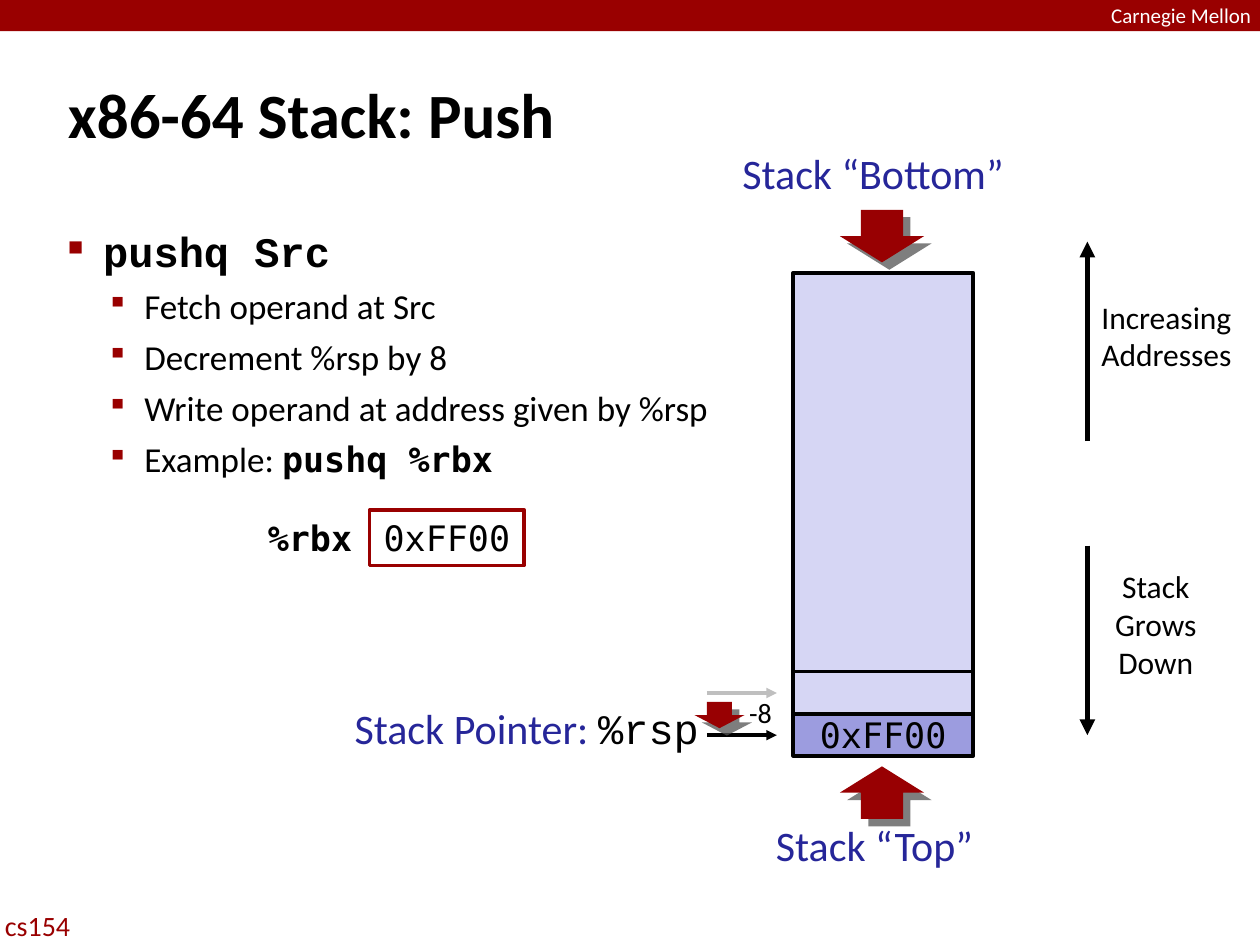
from lxml import etree
from pptx import Presentation
from pptx.dml.color import RGBColor
from pptx.enum.shapes import MSO_CONNECTOR, MSO_SHAPE
from pptx.enum.text import MSO_ANCHOR, PP_ALIGN
from pptx.oxml.ns import qn
from pptx.util import Cm, Pt

LEFT, CENTER, RIGHT = PP_ALIGN.LEFT, PP_ALIGN.CENTER, PP_ALIGN.RIGHT
TOP, MIDDLE = MSO_ANCHOR.TOP, MSO_ANCHOR.MIDDLE
RECTANGLE = MSO_SHAPE.RECTANGLE
DOWN, UP = MSO_SHAPE.DOWN_ARROW, MSO_SHAPE.UP_ARROW
STRAIGHT = MSO_CONNECTOR.STRAIGHT

SANS, COURIER, MONO = "Calibri", "Courier New", "DejaVu Sans Mono"
COLORS = {
    "black": "000000", "white": "FFFFFF", "red": "990000", "blue": "262699",
    "arrow": "980002", "shadow": "535353", "gray": "BFBFBF",
    "stack": "D6D6F4", "pushed": "9C9CDF",
}

# Stack geometry in centimetres
STACK_LEFT, STACK_TOP, STACK_WIDTH, STACK_HEIGHT = 15.99, 5.5, 3.63, 8.89
CELL_HEIGHT = 0.85
STACK_RIGHT = STACK_LEFT + STACK_WIDTH
STACK_BOTTOM = STACK_TOP + STACK_HEIGHT
DIVIDER = STACK_BOTTOM - CELL_HEIGHT


def rgb(name):
    return RGBColor.from_string(COLORS[name])


def add_run(paragraph, text, *, font=SANS, size=20, color="black", bold=False):
    run = paragraph.add_run()
    run.text = text
    run.font.name = font
    run.font.size = Pt(size)
    run.font.bold = bold
    run.font.color.rgb = rgb(color)


presentation = Presentation()
presentation.slide_width, presentation.slide_height = Cm(25.4), Cm(19.05)
slide = presentation.slides.add_slide(presentation.slide_layouts[5])
shapes = slide.shapes

# Title
title = shapes.title
title.left, title.top, title.width, title.height = map(Cm, (1.27, 1.42, 21.59, 2.08))
frame = title.text_frame
frame.margin_left = frame.margin_right = frame.margin_top = frame.margin_bottom = Cm(0.1)
frame.vertical_anchor = TOP
frame.paragraphs[0].alignment = LEFT
add_run(frame.paragraphs[0], "x86-64 Stack: Push", size=36, bold=True)

# Bulleted explanation
code = {"font": MONO, "bold": True}
bullets = [
    (0, [("pushq Src", {"font": COURIER, "size": 24, "bold": True})]),
    (1, [("Fetch operand at Src", {})]),
    (1, [("Decrement %rsp by 8", {})]),
    (1, [("Write operand at address given by %rsp", {})]),
    (1, [("Example: ", {}), ("pushq %rbx", code)]),
]
bullet_styles = [(0.71, 0.71, "■", 50), (1.54, 0.76, "▪", 85)]  # margin, hang, mark, percent
body = shapes.add_textbox(Cm(1.27), Cm(4.45), Cm(22.86), Cm(12.57))
frame = body.text_frame
frame.word_wrap = True
frame.margin_left = frame.margin_right = frame.margin_top = frame.margin_bottom = Cm(0.1)
for index, (level, runs) in enumerate(bullets):
    paragraph = frame.paragraphs[0] if index == 0 else frame.add_paragraph()
    paragraph.level = level
    if index:
        paragraph.space_before = Pt(5)
    margin, hang, mark, percent = bullet_styles[level]
    properties = paragraph._p.get_or_add_pPr()
    properties.set("marL", str(Cm(margin)))
    properties.set("indent", str(-Cm(hang)))
    bullet_color = etree.SubElement(properties, qn("a:buClr"))
    etree.SubElement(bullet_color, qn("a:srgbClr"), val=COLORS["red"])
    etree.SubElement(properties, qn("a:buSzPct"), val=str(percent * 1000))
    etree.SubElement(properties, qn("a:buChar"), char=mark)
    for text, style in runs:
        add_run(paragraph, text, **style)

# Rectangles and labels: box, fill, outline, alignment, wrap, inset, paragraphs of runs
heading = {"size": 24, "color": "blue"}
side = {"size": 18}
labels = [
    ((0, 0, 25.4, 0.63), "red", None, LEFT, True, 0, []),
    ((22.4, 0.06, 3, 0.48), None, None, LEFT, True, 0,
     [[("Carnegie Mellon", {"size": 12, "color": "white"})]]),
    ((0, 18.21, 2.5, 0.84), None, None, LEFT, True, 0.1,
     [[("cs154", {"size": 16, "color": "red"})]]),
    ((STACK_LEFT, STACK_BOTTOM, STACK_WIDTH, CELL_HEIGHT), "pushed", "black", CENTER, True, 0,
     [[("0xFF00", {"font": MONO})]]),
    ((STACK_LEFT, STACK_TOP, STACK_WIDTH, STACK_HEIGHT), "stack", "black", CENTER, True, 0, []),
    ((22.17, 11.43, 2.26, 2.54), "white", None, CENTER, True, 0,
     [[("Stack Grows", side)], [("Down", side)]]),
    ((22.08, 6, 2.87, 1.75), "white", None, CENTER, False, 0,
     [[("Increasing", side)], [("Addresses", side)]]),
    ((14.98, 13.92, 0.7, 0.89), None, None, CENTER, False, 0.1, [[("-8", {"size": 16})]]),
    ((14.77, 2.97, 5.66, 1.24), None, None, CENTER, False, 0, [[("Stack “Bottom”", heading)]]),
    ((7.03, 14.17, 7.06, 1.02), None, None, RIGHT, False, 0,
     [[("Stack Pointer: ", heading), ("%rsp", {"font": COURIER, "size": 24})]]),
    ((15.47, 16.53, 4.32, 1.24), None, None, CENTER, False, 0, [[("Stack “Top”", heading)]]),
    ((7.45, 10.28, 3.12, 1.12), "white", "red", CENTER, True, 0.13,
     [[("0xFF00", {"font": MONO})]]),
    ((5.13, 10.29, 2.24, 1.12), None, None, CENTER, False, 0.13, [[("%rbx", code)]]),
]
for box, fill, outline, alignment, wrap, inset, paragraphs in labels:
    position = map(Cm, box)
    if fill:
        shape = shapes.add_shape(RECTANGLE, *position)
        shape.shadow.inherit = False
        shape.fill.solid()
        shape.fill.fore_color.rgb = rgb(fill)
        if outline:
            shape.line.color.rgb = rgb(outline)
            shape.line.width = Pt(2)
        else:
            shape.line.fill.background()
    else:
        shape = shapes.add_textbox(*position)
    frame = shape.text_frame
    frame.word_wrap = wrap
    frame.vertical_anchor = MIDDLE if outline else TOP
    frame.margin_left = frame.margin_right = frame.margin_top = frame.margin_bottom = Cm(inset)
    for index, runs in enumerate(paragraphs):
        paragraph = frame.paragraphs[0] if index == 0 else frame.add_paragraph()
        paragraph.alignment = alignment
        for text, style in runs:
            add_run(paragraph, text, **style)

# Lines: start, end, color, width, arrowhead
lines = [
    ((STACK_LEFT, DIVIDER), (STACK_RIGHT, DIVIDER), "black", 2, False),
    ((14.25, 13.97), (15.66, 13.97), "gray", 2, True),
    ((14.25, 14.82), (15.66, 14.82), "black", 2, True),
    ((21.92, 8.89), (21.92, 4.87), "black", 3, True),
    ((21.92, 11), (21.92, 14.82), "black", 3, True),
]
for start, end, color, width, arrowhead in lines:
    connector = shapes.add_connector(STRAIGHT, *map(Cm, start + end))
    connector.line.color.rgb = rgb(color)
    connector.line.width = Pt(width)
    if arrowhead:
        etree.SubElement(connector.line._get_or_add_ln(), qn("a:tailEnd"), type="triangle")
    etree.SubElement(connector._element.spPr, qn("a:effectLst"))

# Block arrows with an offset shadow
block_arrows = [
    (DOWN, (16.93, 4.23, 1.7, 1.06)),
    (DOWN, (14, 14.15, 1.01, 0.53)),
    (UP, (16.93, 15.45, 1.7, 1.06)),
]
for kind, box in block_arrows:
    arrow = shapes.add_shape(kind, *map(Cm, box))
    arrow.fill.solid()
    arrow.fill.fore_color.rgb = rgb("arrow")
    arrow.line.fill.background()
    effects = etree.SubElement(arrow._element.spPr, qn("a:effectLst"))
    shadow = etree.SubElement(effects, qn("a:outerShdw"), blurRad="0", dist=str(Pt(6)),
                              dir=str(45 * 60000), algn="ctr", rotWithShape="0")
    shadow_color = etree.SubElement(shadow, qn("a:srgbClr"), val=COLORS["shadow"])
    etree.SubElement(shadow_color, qn("a:alpha"), val="75000")

presentation.save("out.pptx")
